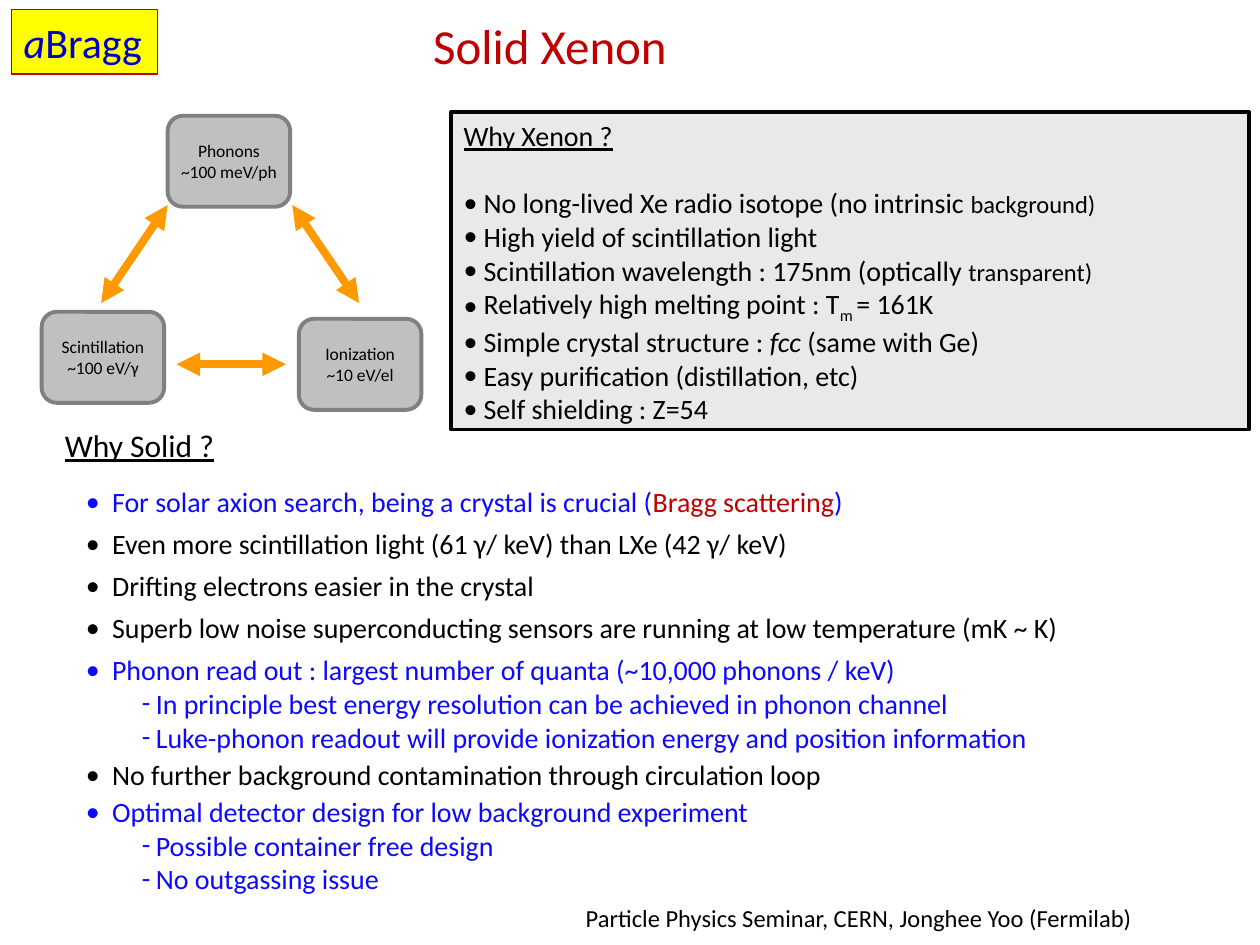
from lxml import etree
from pptx import Presentation
from pptx.dml.color import RGBColor
from pptx.enum import shapes, text
from pptx.oxml import ns
from pptx.util import Pt

HUES = {"ink": "000000", "red": "C00000", "blue": "0D09FF", "navy": "0000CC",
        "gray": "C0C0C0", "edge": "808080", "gold": "FF9900",
        "lemon": "FFFF00", "white": "FFFFFF"}
DOT = ("•", 11.5, 11.5)
WIDE = ("•", 15, 15)
DASH = ("-", 40, 8)


def hue(name):
    """Return the named colour."""
    return RGBColor.from_string(HUES[name])


def sub(node, tag, **atts):
    """Append a drawing element and return it."""
    return etree.SubElement(node, ns.qn("a:" + tag), atts)


def style(font, form):
    """Set font attributes from a dict of format values."""
    for key, val in form.items():
        if key == "color":
            font.color.rgb = hue(val)
        else:
            setattr(font, key, Pt(val) if key == "size" else val)


def bullet(para, mark):
    """Give a paragraph a hanging bullet."""
    char, left, hang = mark
    prop = para._p.get_or_add_pPr()
    prop.set("marL", str(Pt(left)))
    prop.set("indent", str(-Pt(hang)))
    sub(prop, "buFont", typeface="Calibri")
    sub(prop, "buChar", char=char)


def write(shape, rows, form, wrap=True, align="LEFT", anchor="TOP"):
    """Fill a shape with rows of (bullet, runs)."""
    frame = shape.text_frame
    frame.word_wrap = wrap
    frame.vertical_anchor = getattr(text.MSO_ANCHOR, anchor)
    for num, (mark, runs) in enumerate(rows):
        para = frame.add_paragraph() if num else frame.paragraphs[0]
        para.alignment = getattr(text.PP_ALIGN, align)
        if mark:
            bullet(para, mark)
        for words, extra in runs:
            run = para.add_run()
            run.text = words
            look = {"name": "Calibri", "color": "ink", **form, **extra}
            base = look.pop("base", None)
            style(run.font, look)
            if base:
                run.font._element.set("baseline", str(base * 1000))
    return frame


def plain(*lines, mark=None):
    """Make single-run rows."""
    return [(mark, [(line, {})]) for line in lines]


def panel(slide, box, fill, line=None, width=1, kind="RECTANGLE"):
    """Add a filled shape without shadow."""
    shape = slide.shapes.add_shape(
        getattr(shapes.MSO_SHAPE, kind), *map(Pt, box))
    shape.shadow.inherit = False
    shape.fill.solid()
    shape.fill.fore_color.rgb = hue(fill)
    if line:
        shape.line.color.rgb = hue(line)
        shape.line.width = Pt(width)
    else:
        shape.line.fill.background()
    return shape


def label(slide, box, rows, form):
    """Add a text box."""
    return write(slide.shapes.add_textbox(*map(Pt, box)), rows, form)


def arrow(slide, ends):
    """Add a double-headed arrow."""
    line = slide.shapes.add_connector(
        shapes.MSO_CONNECTOR.STRAIGHT, *map(Pt, ends))
    line.line.color.rgb = hue("gold")
    line.line.width = Pt(4.5)
    edge = line.line._get_or_add_ln()
    for tag in ("headEnd", "tailEnd"):
        sub(edge, tag, type="triangle")
    sub(line._element.spPr, "effectLst")


def head(slide, x, y):
    """Place the badge and the title."""
    badge = panel(slide, (x, y, 83.5, 36.7), "lemon", "red", 0.75)
    write(badge, [(None, [("a", {"italic": True}), ("Bragg", {})])],
          {"size": 24, "color": "navy"}, wrap=False)
    title = panel(slide, (x + 234, y, 191.5, 41), "white")
    write(title, plain("Solid Xenon"), {"size": 28, "color": "red"})


def cycle(slide, x, y):
    """Place the three energy channels and their arrows."""
    cards = [(72, 0, "Phonons", "~100 meV/ph"),
             (147, 116, "Ionization", "~10 eV/el"),
             (0, 112, "Scintillation", "~100 eV/γ")]
    for dx, dy, *lines in cards:
        card = panel(slide, (x + dx, y + dy, 70, 52), "gray", "edge", 2.25,
                     "ROUNDED_RECTANGLE")
        write(card, plain(*lines), {"size": 10}, False, "CENTER", "MIDDLE")
    for ax, ay, bx, by in [(34, 107, 72, 51), (181.4, 107, 143.2, 51),
                           (77, 142, 139.6, 142)]:
        arrow(slide, (x + ax, y + ay, x + bx, y + by))


def xenon(slide, box):
    """Place the framed list of reasons for xenon."""
    shape = panel(slide, box, "gray", "ink", 2)
    tint = shape.fill._xPr.find(".//" + ns.qn("a:srgbClr"))
    sub(tint, "alpha", val="35000")
    small = {"size": 14}
    items = [
        [("No long-lived Xe radio isotope (no intrinsic ", {}),
         ("background)", small)],
        [("High yield of scintillation light", {})],
        [("Scintillation wavelength : 175nm (optically ", {}),
         ("transparent)", small)],
        [("Relatively high melting point : T", {}), ("m ", {"base": -25}),
         ("= 161K", {})],
        [("Simple crystal structure : ", {}), ("fcc", {"italic": True}),
         (" (same with Ge)", {})],
        [("Easy purification (distillation, etc)", {})],
        [("Self shielding : Z=54", {})]]
    rows = [(None, [("Why Xenon ?", {"underline": True})])]
    frame = write(shape, rows + [(DOT, runs) for runs in items], {"size": 16})
    frame.paragraphs[1].space_before = Pt(19.5)


def solid(slide, x, y):
    """Place the heading and the reasons for a solid."""
    label(slide, (x, y, 109, 29), plain("Why Solid ?"),
          {"size": 18, "underline": True})
    search = [("For solar axion search, being a crystal is crucial (", {}),
              ("Bragg scattering", {"color": "red"}), (")", {})]
    items = [
        (34, "blue", search, ()),
        (58, "ink", "Even more scintillation light (61 γ/ keV) than LXe "
         "(42 γ/ keV)", ()),
        (82, "ink", "Drifting electrons easier in the crystal", ()),
        (106, "ink", "Superb low noise superconducting sensors are running "
         "at low temperature (mK ~ K)", ()),
        (130, "blue", "Phonon read out : largest number of quanta "
         "(~10,000 phonons / keV)",
         ("In principle best energy resolution can be achieved in phonon "
          "channel",
          "Luke-phonon readout will provide ionization energy and position "
          "information")),
        (190, "ink", "No further background contamination through "
         "circulation loop", ()),
        (211, "blue", "Optimal detector design for low background experiment",
         ("Possible container free design", "No outgassing issue"))]
    for drop, color, main, subs in items:
        rows = [(WIDE, main)] if main is search else plain(main, mark=WIDE)
        rows += plain(*subs, mark=DASH)
        box = (x + 12, y + drop, 620, 7.2 + 19.5 * len(rows))
        label(slide, box, rows, {"size": 16, "color": color})


def main():
    """Build and save the slide."""
    deck = Presentation()
    deck.slide_width, deck.slide_height = Pt(720), Pt(540)
    slide = deck.slides.add_slide(deck.slide_layouts[6])
    cycle(slide, 23.8, 66.2)
    head(slide, 6.5, 5.6)
    xenon(slide, (257.8, 64, 456, 181.6))
    solid(slide, 30, 239.6)
    label(slide, (327.6, 512.6, 392.4, 27),
          plain("Particle Physics Seminar, CERN, Jonghee Yoo (Fermilab)"),
          {"size": 14})
    deck.save("out.pptx")


if __name__ == "__main__":
    main()
